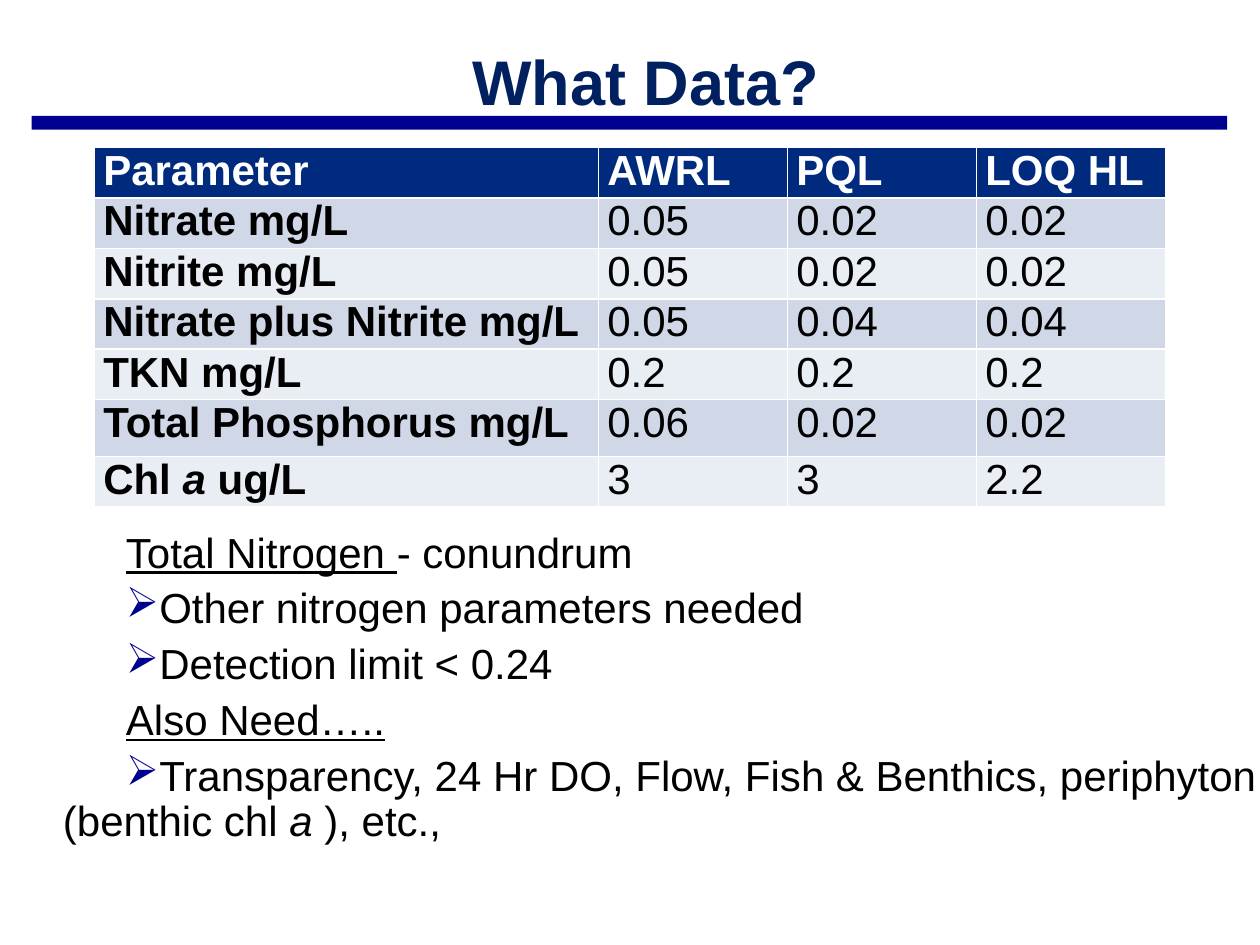
import pptx
import pptx.util
import pptx.dml.color
import pptx.enum.shapes
import pptx.enum.text
from lxml import etree
from pptx.util import Inches, Pt

COLORS = {"title": "002060", "accent": "000090", "header": "002A7E",
          "band": "D0D8E8", "plain": "E9EDF4", "white": "FFFFFF", "text": "000000"}


def color(name):
    return pptx.dml.color.RGBColor.from_string(COLORS[name])


def add_span(para, text, size=24, ink="text", bold=False, italic=False, underline=False):
    span = para.add_run()
    span.text = text
    font = span.font
    font.name, font.size = "Arial", Pt(size)
    font.bold, font.italic, font.underline = bold, italic, underline
    font.color.rgb = color(ink)


deck = pptx.Presentation()
deck.slide_width, deck.slide_height = Inches(10), Inches(7.5)
page = deck.slides.add_slide(deck.slide_layouts[5])

# Title
title = page.shapes.title
title.left, title.top = Inches(0.25), Inches(0.33)
title.width, title.height = Inches(9.75), Inches(0.61)
frame = title.text_frame
frame.margin_left = frame.margin_right = frame.margin_top = frame.margin_bottom = 0
frame.vertical_anchor = pptx.enum.text.MSO_ANCHOR.MIDDLE
frame.paragraphs[0].alignment = pptx.enum.text.PP_ALIGN.CENTER
add_span(frame.paragraphs[0], "What Data?", 36, "title", bold=True)

# Notes under the table: (bulleted, [(text, style), ...])
notes = [
    (False, [("Total Nitrogen ", {"underline": True}), ("- conundrum", {})]),
    (True, [("Other nitrogen parameters needed", {})]),
    (True, [("Detection limit < 0.24", {})]),
    (False, [("Also Need…..", {"underline": True})]),
    (True, [("Transparency, 24 Hr DO, Flow, Fish & Benthics, periphyton (benthic chl ", {}),
            ("a", {"italic": True}), (" ), etc.,", {})]),
]
box = page.shapes.add_textbox(Inches(0.5), Inches(4.22), Inches(9.5), Inches(3.09))
frame = box.text_frame
frame.word_wrap = True
frame.margin_left = frame.margin_right = frame.margin_top = frame.margin_bottom = 0
for index, (bulleted, spans) in enumerate(notes):
    para = frame.paragraphs[0] if index == 0 else frame.add_paragraph()
    para.line_spacing = 0.9
    para.space_before = Pt(6)
    for text, style in spans:
        add_span(para, text, **style)
    props = para._p.get_or_add_pPr()
    props.set("marL", "0")
    props.set("indent", str(Inches(0.5)))
    if bulleted:
        tint = etree.SubElement(props, pptx.oxml.ns.qn("a:buClr"))
        etree.SubElement(tint, pptx.oxml.ns.qn("a:srgbClr"), val=COLORS["accent"])
        etree.SubElement(props, pptx.oxml.ns.qn("a:buChar"), char="➢")

# Rule under the title
rule = page.shapes.add_shape(pptx.enum.shapes.MSO_SHAPE.RECTANGLE,
                             Inches(0.25), Inches(0.92), Inches(9.49), Inches(0.11))
rule.shadow.inherit = False
rule.fill.solid()
rule.fill.fore_color.rgb = color("accent")
rule.line.fill.background()

# Detection limits; the default table style supplies the white borders
rows = [
    ("Parameter", "AWRL", "PQL", "LOQ HL"),
    ("Nitrate mg/L", "0.05", "0.02", "0.02"),
    ("Nitrite mg/L", "0.05", "0.02", "0.02"),
    ("Nitrate plus Nitrite mg/L", "0.05", "0.04", "0.04"),
    ("TKN mg/L", "0.2", "0.2", "0.2"),
    ("Total Phosphorus mg/L", "0.06", "0.02", "0.02"),
    (("Chl ", "a ", "ug/L"), "3", "3", "2.2"),
]
table = page.shapes.add_table(len(rows), 4, Inches(0.75), Inches(1.17),
                              Inches(8.5), Inches(2.85)).table
for column, width in zip(table.columns, (4, 1.5, 1.5, 1.5)):
    column.width = Inches(width)
for row_index, values in enumerate(rows):
    table.rows[row_index].height = Inches(0.45 if row_index == 5 else 0.39)
    header = row_index == 0
    fill = "header" if header else ("band" if row_index % 2 else "plain")
    for column_index, value in enumerate(values):
        cell = table.cell(row_index, column_index)
        cell.margin_left = cell.margin_right = Inches(0.07)
        cell.margin_top = cell.margin_bottom = 0
        cell.fill.solid()
        cell.fill.fore_color.rgb = color(fill)
        for text in (value if isinstance(value, tuple) else (value,)):
            add_span(cell.text_frame.paragraphs[0], text, ink="white" if header else "text",
                     bold=header or column_index == 0, italic=text == "a ")

deck.save("out.pptx")
